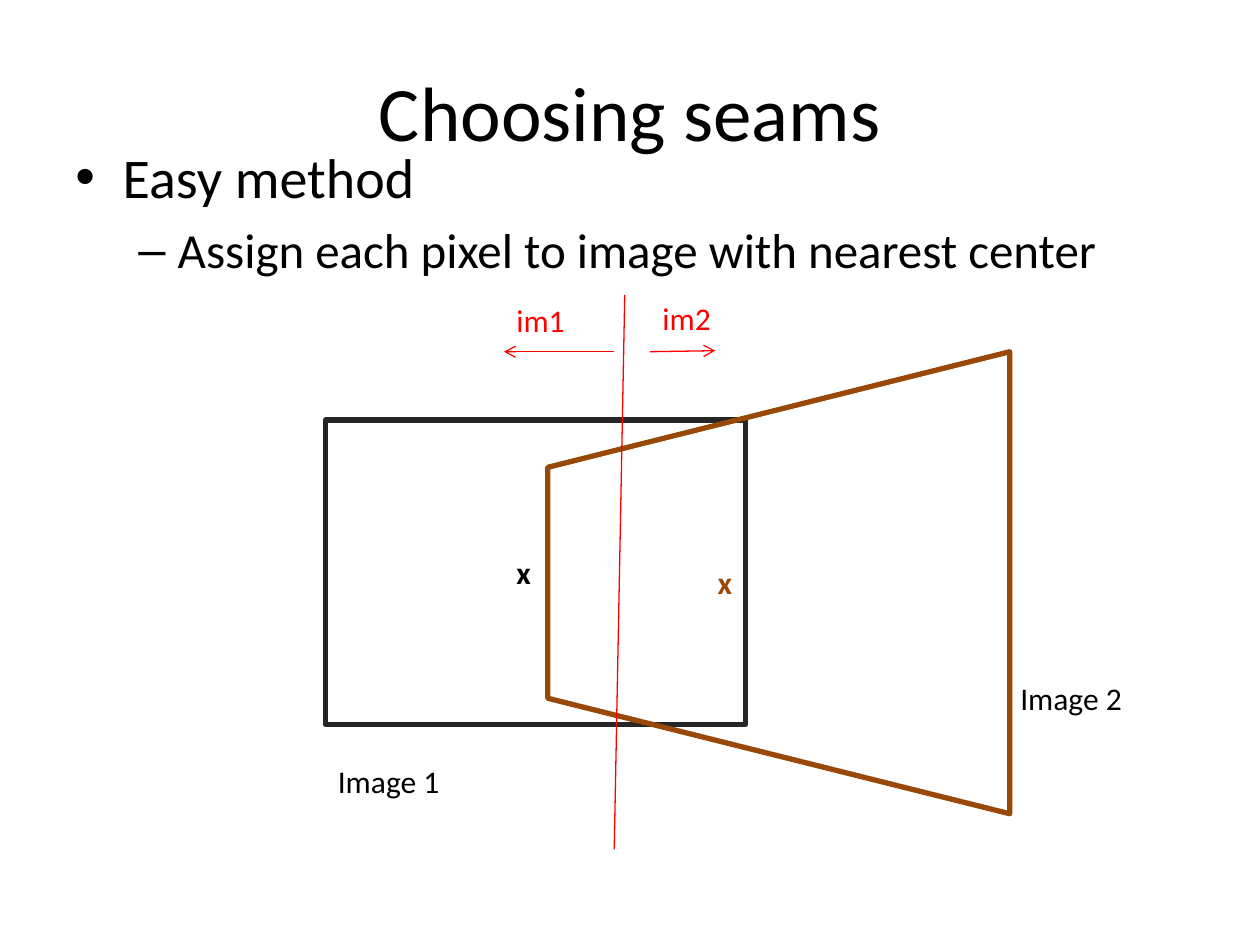
from pptx import Presentation
from pptx.dml.color import RGBColor
from pptx.enum import shapes, text
from pptx.oxml import parse_xml
from pptx.oxml.ns import nsdecls, qn
from pptx.util import Pt
from lxml import etree

THEME = {
    "font": "Calibri",
    "black": RGBColor(0x00, 0x00, 0x00),
    "charcoal": RGBColor(0x26, 0x26, 0x26),
    "brown": RGBColor(0x98, 0x48, 0x07),
    "red": RGBColor(0xFF, 0x00, 0x00),
    "title": 44, "label": 18,
    "outline": 3, "thin": 0.75,
}

TITLE = ("Choosing seams", (36, 18, 648, 90))
BODY_BOX = (36, 78, 648, 404.6)
# text, size, bullet, left margin, hanging indent
BULLETS = [
    ("Easy method", 32, "•", 27, 27),
    ("Assign each pixel to image with nearest center", 28, "–", 58.5, 22.5),
]
# preset, box, rotation, colour
FRAMES = [
    (shapes.MSO_SHAPE.RECTANGLE, (186, 240, 240, 174), 0, "charcoal"),
    (shapes.MSO_SHAPE.TRAPEZOID, (313, 201, 264, 264), 270, "brown"),
]
# start, end, has arrowhead
SEAM_LINES = [
    ((357, 168.5), (351, 485.3), False),
    ((351, 201), (288, 201), True),
    ((371.5, 201), (408.7, 200.4), True),
]
# text, left, top, width, colour, bold
LABELS = [
    ("Image 1", 186, 432, 80, "black", False),
    ("Image 2", 576, 384.5, 80, "black", False),
    ("x", 288, 312.5, 24.5, "black", True),
    ("x", 403, 318.2, 24.5, "brown", True),
    ("im1", 288, 168.5, 44, "red", False),
    ("im2", 371.5, 167.5, 44, "red", False),
]
LABEL_HEIGHT = 29


def points(values):
    return [Pt(value) for value in values]


def style_font(font, size, colour="black", bold=False):
    font.name = THEME["font"]
    font.size = Pt(size)
    font.bold = bold
    font.color.rgb = THEME[colour]


def add_title(page):
    words, box = TITLE
    title = page.shapes.title
    title.left, title.top, title.width, title.height = points(box)
    title.text_frame.text = words
    title.text_frame.vertical_anchor = text.MSO_ANCHOR.MIDDLE
    para = title.text_frame.paragraphs[0]
    para.alignment = text.PP_ALIGN.CENTER
    style_font(para.font, THEME["title"])


def add_bullets(page):
    frame = page.shapes.add_textbox(*points(BODY_BOX)).text_frame
    frame.word_wrap = True
    for index, (words, size, mark, margin, hanging) in enumerate(BULLETS):
        para = frame.add_paragraph() if index else frame.paragraphs[0]
        para.text = words
        para.level = index
        para.space_before = Pt(size * 0.2)
        style_font(para.font, size)
        properties = para._p.get_or_add_pPr()
        properties.set("marL", str(Pt(margin)))
        properties.set("indent", str(-Pt(hanging)))
        bullet = parse_xml(f'<a:buChar {nsdecls("a")} char="{mark}"/>')
        properties.find(qn("a:spcBef")).addnext(bullet)
        bullet.addprevious(parse_xml(f'<a:buFont {nsdecls("a")} typeface="Arial"/>'))


def add_frame(page, preset, box, rotation, colour):
    shape = page.shapes.add_shape(preset, *points(box))
    shape.rotation = rotation
    shape.shadow.inherit = False
    shape.fill.background()
    shape.line.color.rgb = THEME[colour]
    shape.line.width = Pt(THEME["outline"])


def add_seam_line(page, start, end, arrow):
    line = page.shapes.add_connector(
        shapes.MSO_CONNECTOR.STRAIGHT, *points(start + end))
    line.line.color.rgb = THEME["red"]
    line.line.width = Pt(THEME["thin"])
    if arrow:
        etree.SubElement(line.line._get_or_add_ln(), qn("a:tailEnd"), type="arrow")
    etree.SubElement(line._element.spPr, qn("a:effectLst"))


def add_label(page, words, left, top, width, colour, bold):
    box = page.shapes.add_textbox(*points((left, top, width, LABEL_HEIGHT)))
    frame = box.text_frame
    frame.word_wrap = False
    frame.auto_size = text.MSO_AUTO_SIZE.SHAPE_TO_FIT_TEXT
    frame.text = words
    style_font(frame.paragraphs[0].font, THEME["label"], colour, bold)


def main():
    deck = Presentation()
    deck.slide_width, deck.slide_height = Pt(720), Pt(540)
    page = deck.slides.add_slide(deck.slide_layouts.get_by_name("Title Only"))
    add_title(page)
    add_bullets(page)
    for frame in FRAMES:
        add_frame(page, *frame)
    for line in SEAM_LINES:
        add_seam_line(page, *line)
    for label in LABELS:
        add_label(page, *label)
    deck.save("out.pptx")


if __name__ == "__main__":
    main()
